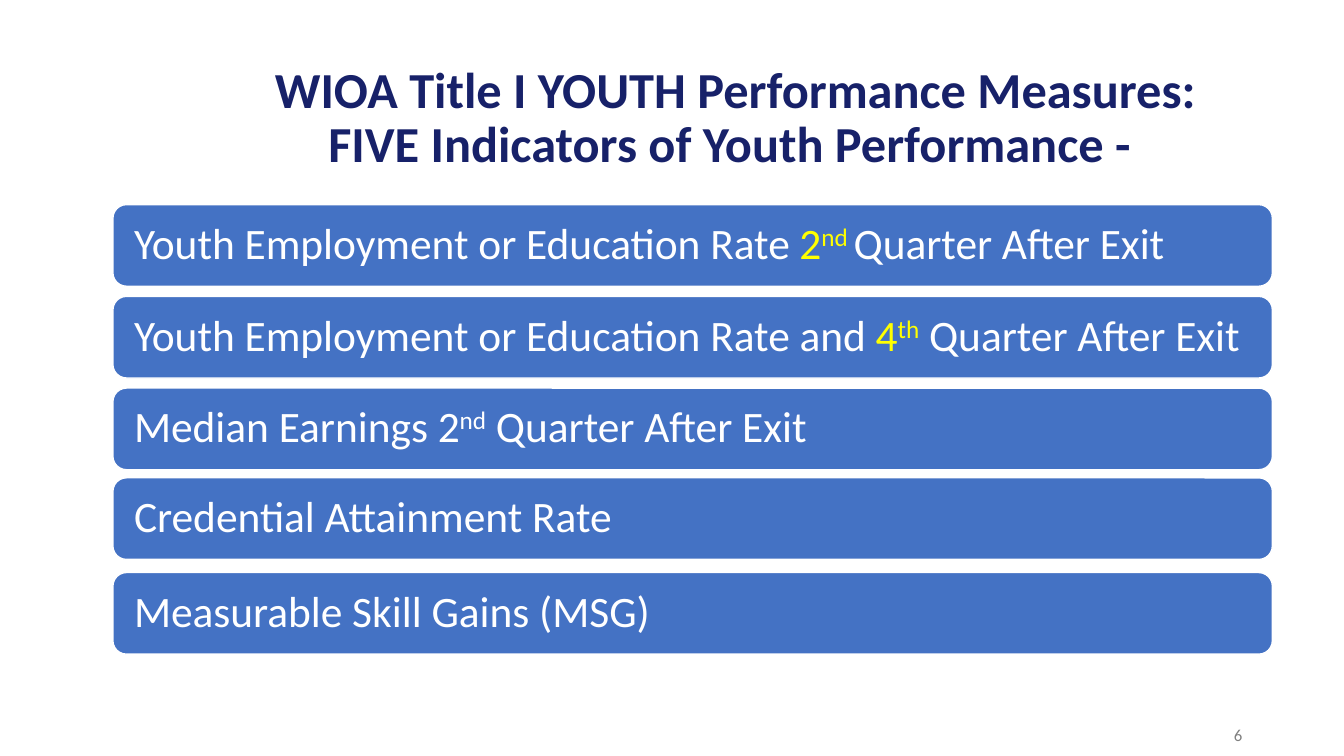
import pptx
import pptx.dml.color
import pptx.enum.shapes
import pptx.enum.text
import pptx.util
from pptx.util import Inches

# Content
NAVY, BLUE, WHITE, YELLOW, GRAY = "172169", "4472C4", "FFFFFF", "FFFF00", "808080"
FONT = "Calibri"
TITLE = [
    ("WIOA Title I YOUTH Performance Measures:\n", {}),
    ("FIVE Indicators of Youth Performance - ", {}),
]
PAGE_NUMBER = [("6", {})]
RAISED = {"baseline": 30}
BRIGHT = {"color": YELLOW}

# Top of each bar, then its text runs
INDICATORS = [
    (2.03, [("Youth Employment or Education Rate ", {}), ("2", BRIGHT),
            ("nd ", BRIGHT | RAISED), ("Quarter After Exit", {})]),
    (2.94, [("Youth Employment or Education Rate and ", {}), ("4", BRIGHT),
            ("th", BRIGHT | RAISED), (" Quarter After Exit", {})]),
    (3.85, [("Median Earnings 2", {}), ("nd", RAISED), (" Quarter After Exit", {})]),
    (4.74, [("Credential Attainment Rate", {})]),
    (5.68, [("Measurable Skill Gains (MSG)", {})]),
]
BAR_LEFT, BAR_WIDTH, BAR_HEIGHT = 1.12, 11.5, 0.81
BAR_INSET = 0.17


def rgb(hex_color):
    return pptx.dml.color.RGBColor.from_string(hex_color)


def write(holder, runs, size, color, align="LEFT", bold=False, spacing=1.0,
          inset_x=0.1, inset_y=0.05):
    frame = holder.text_frame
    frame.word_wrap = True
    frame.vertical_anchor = pptx.enum.text.MSO_ANCHOR.MIDDLE
    frame.margin_left = frame.margin_right = Inches(inset_x)
    frame.margin_top = frame.margin_bottom = Inches(inset_y)
    paragraph = frame.paragraphs[0]
    paragraph.alignment = getattr(pptx.enum.text.PP_ALIGN, align)
    paragraph.line_spacing = spacing
    for words, style in runs:
        run = paragraph.add_run()
        run.text = words.rstrip("\n")
        run.font.name = FONT
        run.font.size = pptx.util.Pt(size)
        run.font.bold = bold
        run.font.color.rgb = rgb(style.get("color", color))
        if "baseline" in style:
            run._r.get_or_add_rPr().set("baseline", str(style["baseline"] * 1000))
        if words.endswith("\n"):
            paragraph.add_line_break()


deck = pptx.Presentation()
deck.slide_width, deck.slide_height = Inches(13.33), Inches(7.5)
slide = deck.slides.add_slide(deck.slide_layouts[6])

# Title
title = slide.shapes.add_textbox(Inches(2.5), Inches(0.67), Inches(9.59), Inches(1.02))
write(title, TITLE, 36, NAVY, align="CENTER", bold=True, spacing=0.9)

# Slide number
page_number = slide.shapes.add_textbox(Inches(9.42), Inches(7.09), Inches(3), Inches(0.4))
write(page_number, PAGE_NUMBER, 12, GRAY, align="RIGHT")

# Indicator bars
for top, runs in INDICATORS:
    bar = slide.shapes.add_shape(
        pptx.enum.shapes.MSO_SHAPE.ROUNDED_RECTANGLE,
        Inches(BAR_LEFT), Inches(top), Inches(BAR_WIDTH), Inches(BAR_HEIGHT))
    bar.shadow.inherit = False
    bar.fill.solid()
    bar.fill.fore_color.rgb = rgb(BLUE)
    bar.line.color.rgb = rgb(WHITE)
    bar.line.width = pptx.util.Pt(1)
    write(bar, runs, 31, WHITE, spacing=0.9, inset_x=BAR_INSET, inset_y=BAR_INSET)

deck.save("out.pptx")
